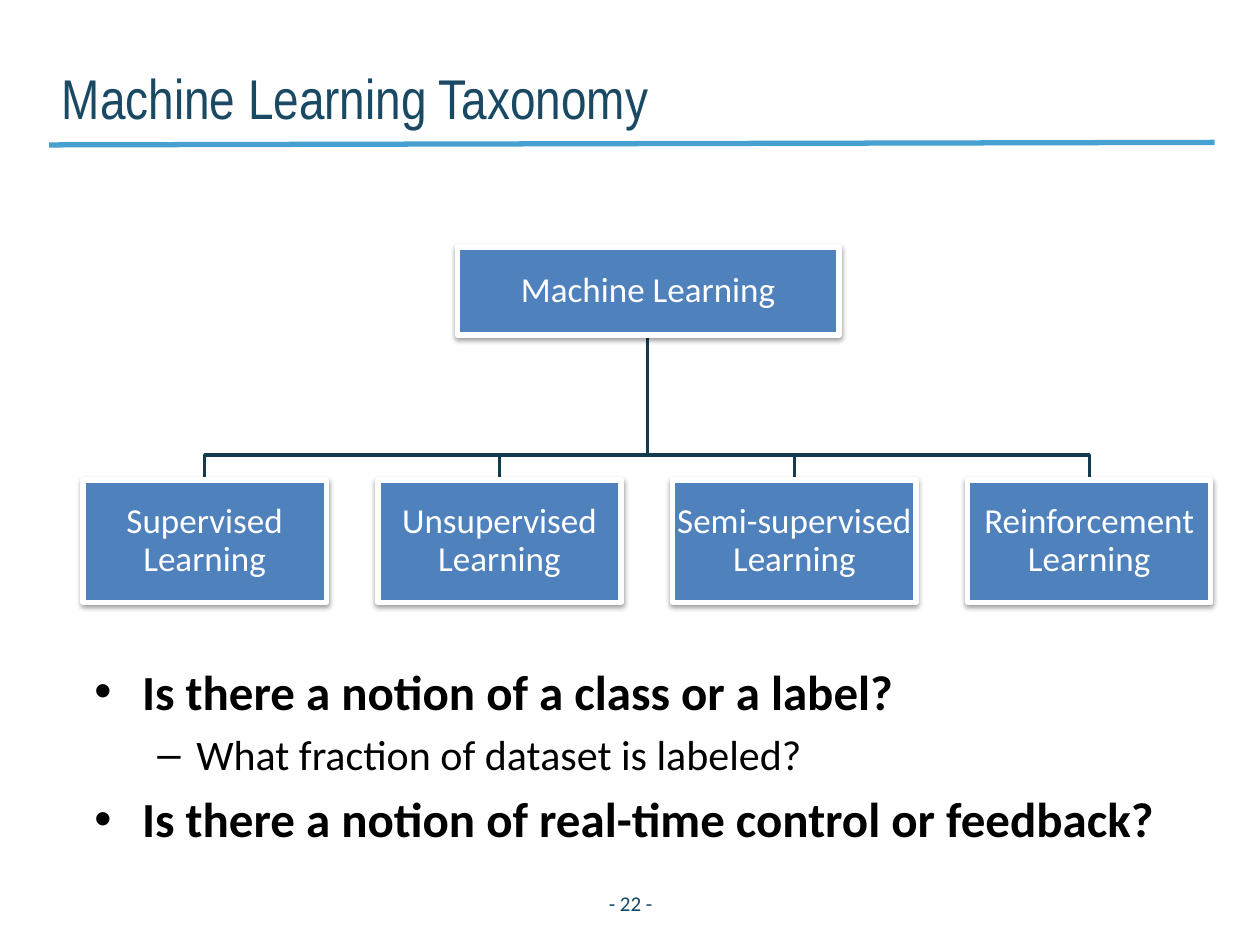
from dataclasses import dataclass

from lxml import etree
from pptx import Presentation
from pptx.dml.color import RGBColor
from pptx.enum.shapes import MSO_CONNECTOR, MSO_SHAPE
from pptx.enum.text import MSO_ANCHOR, MSO_AUTO_SIZE, PP_ALIGN
from pptx.oxml.ns import qn
from pptx.slide import Slide
from pptx.util import Inches, Pt

RECTANGLE = MSO_SHAPE.RECTANGLE
STRAIGHT = MSO_CONNECTOR.STRAIGHT
TOP, MIDDLE, BOTTOM = MSO_ANCHOR.TOP, MSO_ANCHOR.MIDDLE, MSO_ANCHOR.BOTTOM
LEFT, CENTER = PP_ALIGN.LEFT, PP_ALIGN.CENTER
TITLE_ONLY = 5


def color(value):
    return RGBColor.from_string(value)


def add_child(parent, tag, **attributes):
    child = etree.SubElement(parent, qn(tag))
    for name, value in attributes.items():
        child.set(name, str(value))
    return child


def write(para, text, size, font="Calibri", ink="000000", bold=False, align=LEFT,
          before=0, spacing=1.0, margin=0, hanging=0, bullet=None):
    para.alignment = align
    para.space_before = Pt(before)
    para.line_spacing = spacing
    properties = para._p.get_or_add_pPr()
    properties.set("marL", str(Inches(margin)))
    properties.set("indent", str(-Inches(hanging)))
    if bullet:
        add_child(properties, "a:buFont", typeface="Arial")
        add_child(properties, "a:buChar", char=bullet)
    span = para.add_run()
    span.text = text
    span.font.name, span.font.size, span.font.bold = font, Pt(size), bold
    span.font.color.rgb = color(ink)


def set_frame(frame, anchor, across=0.1, down=0.05):
    frame.word_wrap = True
    frame.auto_size = MSO_AUTO_SIZE.NONE
    frame.vertical_anchor = anchor
    frame.margin_left = frame.margin_right = Inches(across)
    frame.margin_top = frame.margin_bottom = Inches(down)


@dataclass
class SlideBuilder:
    page: Slide
    title_ink: str = "194963"
    rule_ink: str = "46A0D0"
    number_ink: str = "114766"
    branch_ink: str = "143A4F"
    node_fill: str = "4F81BD"
    white: str = "FFFFFF"

    def title(self, text, left, top, width, height):
        box = self.page.shapes.title
        box.left, box.top = Inches(left), Inches(top)
        box.width, box.height = Inches(width), Inches(height)
        set_frame(box.text_frame, BOTTOM, down=0)
        write(box.text_frame.paragraphs[0], text, 32, font="Arial Narrow",
              ink=self.title_ink, margin=0.25, hanging=0.25)

    def rule(self, *ends):
        line = self.page.shapes.add_connector(STRAIGHT, *map(Inches, ends))
        line.line.color.rgb = color(self.rule_ink)
        line.line.width = Pt(3)
        add_child(line._element.spPr, "a:effectLst")

    def text(self, items, *place, anchor=TOP):
        box = self.page.shapes.add_textbox(*map(Inches, place))
        frame = box.text_frame
        set_frame(frame, anchor)
        for index, (text, style) in enumerate(items):
            para = frame.add_paragraph() if index else frame.paragraphs[0]
            write(para, text, **style)

    def branch(self, start_x, start_y, bend_y, end_x, end_y):
        builder = self.page.shapes.build_freeform(Inches(start_x), Inches(start_y))
        corners = [(start_x, bend_y), (end_x, bend_y), (end_x, end_y)]
        builder.add_line_segments([(Inches(x), Inches(y)) for x, y in corners], close=False)
        shape = builder.convert_to_shape()
        shape.shadow.inherit = False
        shape.fill.background()
        shape.line.color.rgb = color(self.branch_ink)
        shape.line.width = Pt(2)

    def node(self, text, *place):
        shape = self.page.shapes.add_shape(RECTANGLE, *map(Inches, place))
        shape.fill.solid()
        shape.fill.fore_color.rgb = color(self.node_fill)
        shape.line.color.rgb = color(self.white)
        shape.line.width = Pt(3)
        shape.shadow.inherit = False
        effects = shape._element.spPr.find(qn("a:effectLst"))
        shadow = add_child(effects, "a:outerShdw", blurRad=Pt(3.1), dist=Pt(1.6),
                           dir=90 * 60000, rotWithShape=0)
        ink = add_child(shadow, "a:srgbClr", val="000000")
        add_child(ink, "a:alpha", val=38000)
        set_frame(shape.text_frame, MIDDLE, 0.01, 0.01)
        write(shape.text_frame.paragraphs[0], text, 20, ink=self.white,
              align=CENTER, spacing=0.9)


def main():
    deck = Presentation()
    deck.slide_width, deck.slide_height = Inches(10), Inches(7.5)
    slide = SlideBuilder(deck.slides.add_slide(deck.slide_layouts[TITLE_ONLY]))

    # Heading and page number
    slide.rule(0.39, 1.15, 9.64, 1.13)
    slide.title("Machine Learning Taxonomy", 0.39, 0.2, 9.11, 0.84)
    number_style = dict(size=12, ink=slide.number_ink, align=CENTER)
    slide.text([("- 22 -", number_style)], 4.5, 6.97, 1.01, 0.4, anchor=MIDDLE)

    # Taxonomy tree: branches lie behind the nodes
    kinds = ["Supervised", "Unsupervised", "Semi-supervised", "Reinforcement"]
    first_left, step, width, top, height = 0.66, 2.34, 1.93, 3.81, 0.97
    lefts = [first_left + step * index for index in range(len(kinds))]
    for left in lefts:
        slide.branch(5.14, 2.67, 3.61, left + width / 2, top)
    slide.node("Machine Learning", 3.63, 1.96, 3.03, 0.7)
    for kind, left in zip(kinds, lefts):
        slide.node(f"{kind} Learning", left, top, width, height)

    # Questions
    question = dict(size=28, bold=True, margin=0.38, hanging=0.38, bullet="•")
    detail = dict(size=24, before=4.8, margin=0.81, hanging=0.31, bullet="–")
    slide.text([
        ("Is there a notion of a class or a label?", question),
        ("What fraction of dataset is labeled?", detail),
        ("Is there a notion of real-time control or feedback?", question | {"before": 5.6}),
    ], 0.65, 5.2, 8.97, 1.62)

    deck.save("out.pptx")


if __name__ == "__main__":
    main()
